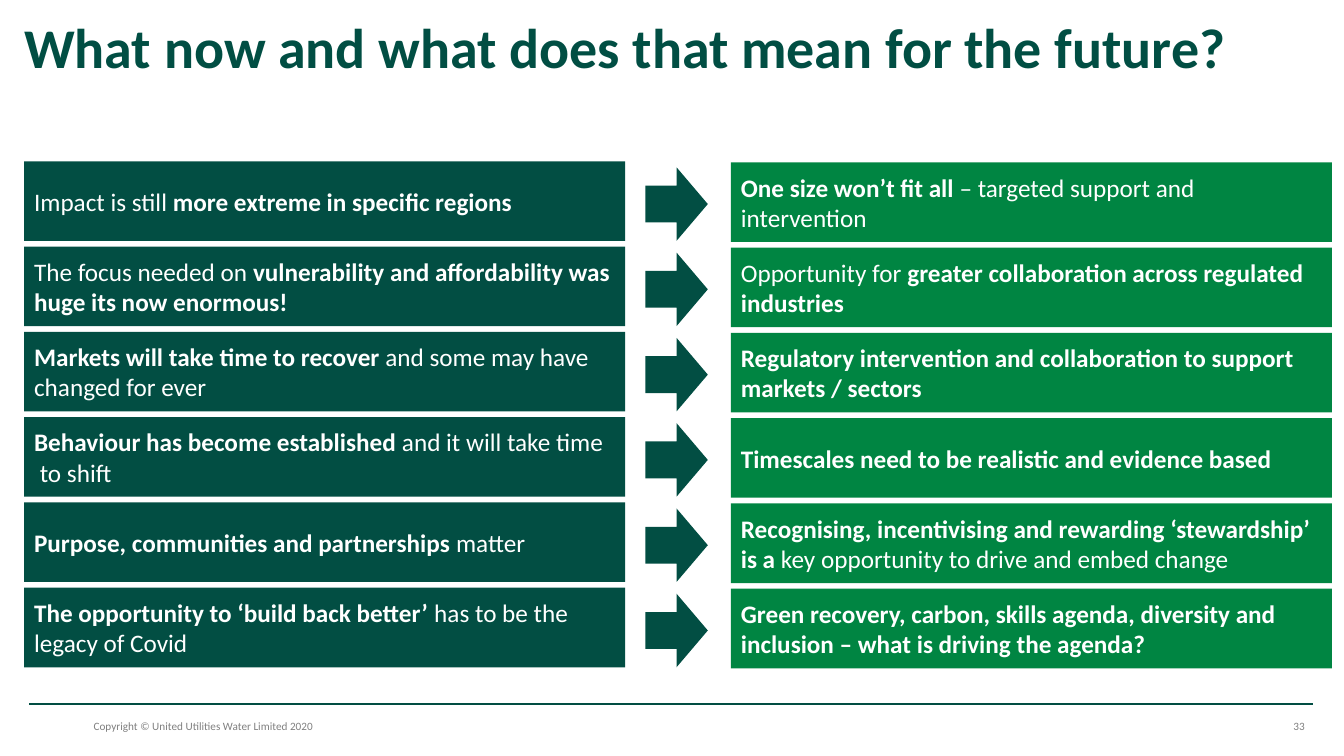
import pptx
import pptx.util
import pptx.dml.color
import pptx.enum.shapes
import pptx.enum.text
import pptx.oxml

Inches = pptx.util.Inches
Pt = pptx.util.Pt
Shape = pptx.enum.shapes.MSO_SHAPE
Anchor = pptx.enum.text.MSO_ANCHOR
Align = pptx.enum.text.PP_ALIGN

COLOURS = {"dark": "024E43", "title": "014E43", "green": "008542", "grey": "808080", "white": "FFFFFF"}
FONT = "Calibri"
ROW_HEIGHT = 0.79
ROW_PITCH = (5.83 - 1.6) / 5

FINDINGS = [
    [[("Impact is still ", False), ("more extreme in specific regions", True)]],
    [[("The focus needed on ", False),
      ("vulnerability and affordability was huge its now enormous!", True)]],
    [[("Markets will take time to recover", True), (" and some may have changed for ever", False)]],
    [[("Behaviour has become established ", True), ("and it will take time", False)],
     [(" to shift", False)]],
    [[("Purpose, communities and partnerships ", True), ("matter", False)]],
    [[("The opportunity to ‘build back better’ ", True), ("has to be the legacy of Covid", False)]],
]
RESPONSES = [
    [[("One size won’t fit all ", True), ("– targeted support and intervention", False)]],
    [[("Opportunity for ", False), ("greater collaboration across regulated industries", True)]],
    [[("Regulatory intervention and collaboration to support markets / sectors", True)]],
    [[("Timescales need to be realistic and evidence based", True)]],
    [[("Recognising, incentivising and rewarding ‘stewardship’", True)],
     [("is a ", True), ("key opportunity to drive and embed change", False)]],
    [[("Green recovery, carbon, skills agenda, diversity and inclusion – what is driving the agenda?", True)]],
]


def colour(name):
    return pptx.dml.color.RGBColor.from_string(COLOURS[name])


def style(font, size, name, bold=False):
    font.name = FONT
    font.size = Pt(size)
    font.bold = bold
    font.color.rgb = colour(name)


def add_block(page, kind, left, top, width, height, fill):
    block = page.shapes.add_shape(kind, Inches(left), Inches(top), Inches(width), Inches(height))
    block.shadow.inherit = False
    block.fill.solid()
    block.fill.fore_color.rgb = colour(fill)
    block.line.fill.background()
    return block


def add_title(page, left, top, width, height):
    title = page.shapes.title
    title.left, title.top = Inches(left), Inches(top)
    title.width, title.height = Inches(width), Inches(height)
    frame = title.text_frame
    frame.text = "What now and what does that mean for the future?"
    frame.auto_size = pptx.enum.text.MSO_AUTO_SIZE.NONE
    frame.word_wrap = True
    frame.vertical_anchor = Anchor.TOP
    frame.margin_left = frame.margin_right = frame.margin_top = frame.margin_bottom = 0
    para = frame.paragraphs[0]
    para.alignment = Align.LEFT
    para.line_spacing = 0.9
    style(para.runs[0].font, 40, "title", True)


def add_column(page, left, top, width, fill, entries):
    for row, paragraphs in enumerate(entries):
        box = add_block(page, Shape.RECTANGLE, left, top + row * ROW_PITCH, width, ROW_HEIGHT, fill)
        frame = box.text_frame
        frame.word_wrap = True
        frame.vertical_anchor = Anchor.MIDDLE
        for index, spans in enumerate(paragraphs):
            para = frame.add_paragraph() if index else frame.paragraphs[0]
            para.alignment = Align.LEFT
            for text, bold in spans:
                span = para.add_run()
                span.text = text
                style(span.font, 18, "white", bold)


def add_arrows(page, left, top, width, height, count):
    for row in range(count):
        add_block(page, Shape.RIGHT_ARROW, left, top + row * ROW_PITCH, width, height, "dark")


def add_footer(page, left, top, right):
    rule = page.shapes.add_connector(pptx.enum.shapes.MSO_CONNECTOR.STRAIGHT,
                                     Inches(left), Inches(top), Inches(right), Inches(top))
    rule.line.color.rgb = colour("dark")
    rule.line.width = Pt(1.5)
    properties = rule._element.spPr
    properties.append(properties.makeelement(pptx.oxml.ns.qn("a:effectLst"), {}))
    notes = [
        ("Copyright © United Utilities Water Limited 2020", left + 0.54, 2.52, Align.LEFT),
        ("33", right - 0.51, 0.53, Align.RIGHT),
    ]
    for text, start, width, alignment in notes:
        box = page.shapes.add_textbox(Inches(start), Inches(top + 0.11), Inches(width), Inches(0.4))
        box.text_frame.word_wrap = True
        box.text_frame.text = text
        para = box.text_frame.paragraphs[0]
        para.alignment = alignment
        style(para.runs[0].font, 8, "grey")


def main():
    deck = pptx.Presentation()
    deck.slide_width, deck.slide_height = Inches(13.33), Inches(7.5)
    page = deck.slides.add_slide(deck.slide_layouts.get_by_name("Title Only"))
    add_footer(page, 0.29, 6.98, 13.02)
    add_title(page, 0.24, 0.2, 12.39, 1.17)
    add_column(page, 0.24, 1.6, 5.96, "dark", FINDINGS)
    add_column(page, 7.25, 1.61, 5.96, "green", RESPONSES)
    add_arrows(page, 6.4, 1.66, 0.62, 0.73, len(FINDINGS))
    deck.save("out.pptx")


if __name__ == "__main__":
    main()
